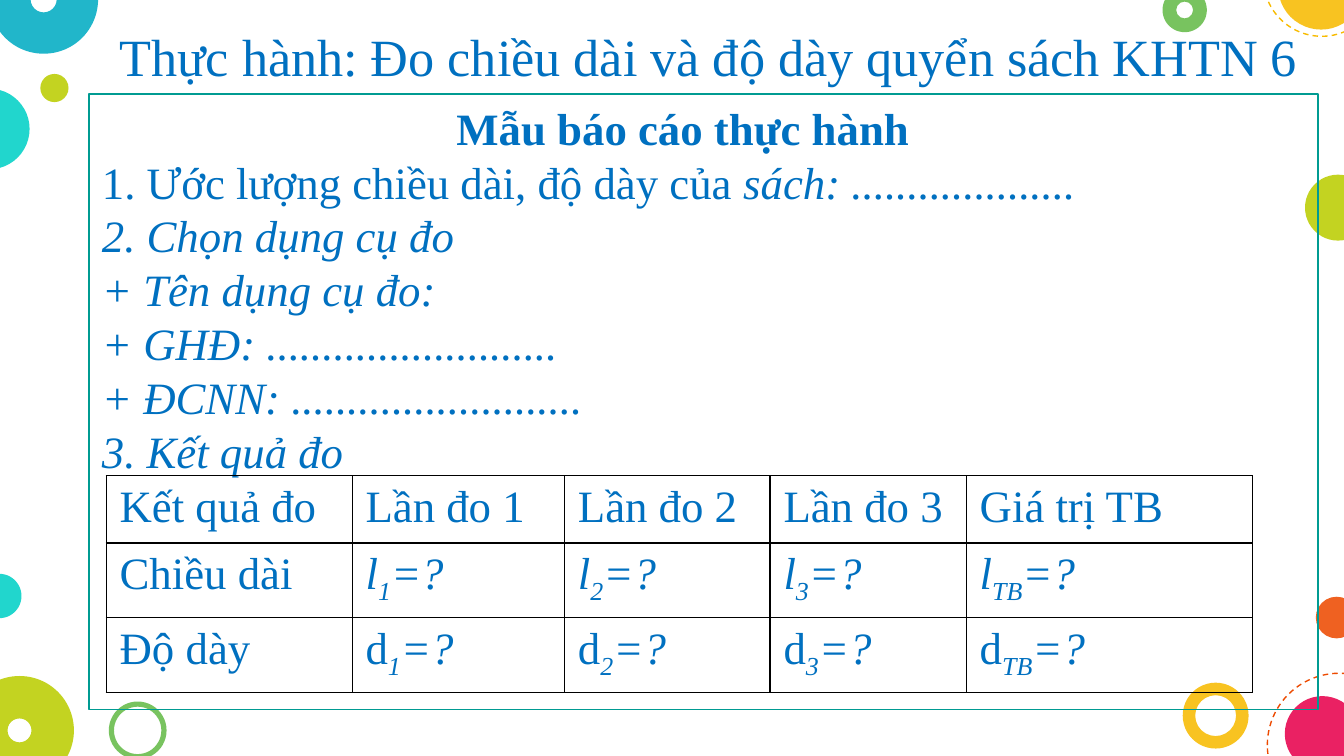
from dataclasses import dataclass
from typing import NamedTuple

from lxml import etree
from pptx import Presentation
from pptx.dml.color import RGBColor
from pptx.enum import dml, shapes, text
from pptx.oxml import ns
from pptx.util import Inches, Pt


@dataclass(frozen=True)
class Theme:
    font: str = "Times New Roman"
    ink: str = "0070C0"
    frame: str = "009B92"
    grid: str = "000000"
    aqua: str = "00D1C6"
    teal: str = "00ACC3"
    gold: str = "F8BB00"
    lime: str = "BBCD00"
    green: str = "65BB48"
    red: str = "ED4A00"
    pink: str = "E8004C"
    title: int = 28
    body: int = 24
    alpha: int = 87


T = Theme()


class Dot(NamedTuple):
    left: float
    top: float
    size: float
    color: str
    ring: float = 0  # band width as a share of the size; 0 is a full disc
    dash: bool = False


class Bit(NamedTuple):
    words: str
    bold: bool = False
    slant: bool = False
    sub: bool = False


DOTS = [
    Dot(-0.38, 0.66, 0.6, T.aqua),
    Dot(8.8, 5.08, 0.49, T.gold, 0.19),
    Dot(-0.08, -0.41, 0.81, T.teal, 0.38),
    Dot(0.3, 0.55, 0.21, T.lime),
    Dot(9.43, 5.01, 1.07, T.red, dash=True),
    Dot(0.81, 5.22, 0.43, T.green, 0.09),
    Dot(9.79, 4.44, 0.31, T.red),
    Dot(-0.26, 5.03, 0.81, T.lime, 0.39),
    Dot(9.56, 5.18, 0.56, T.pink),
    Dot(8.65, -0.09, 0.33, T.green, 0.31),
    Dot(9.51, -0.42, 0.64, T.gold),
    Dot(9.71, 1.3, 0.49, T.lime),
    Dot(9.4, -0.6, 0.87, T.gold, dash=True),
    Dot(-0.17, 4.27, 0.33, T.aqua),
]

LINES = [
    [Bit("Mẫu báo cáo thực hành", bold=True)],
    [Bit("1. Ước lượng chiều dài, độ dày của "),
     Bit("sách: ....................", slant=True)],
    [Bit("2. Chọn dụng cụ đo", slant=True)],
    [Bit("+ Tên dụng cụ đo:", slant=True)],
    [Bit("+ GHĐ: ..........................", slant=True)],
    [Bit("+ ĐCNN: ..........................", slant=True)],
    [Bit("3. Kết quả đo", slant=True)],
]

HEADS = ["Kết quả đo", "Lần đo 1", "Lần đo 2", "Lần đo 3", "Giá trị TB"]
MARKS = ["1", "2", "3", "TB"]
COLS = [1.83, 1.58, 1.53, 1.46, 2.13]
ROWS = [0.5, 0.55, 0.55]


def rgb(code: str) -> RGBColor:
    return RGBColor.from_string(code)


def box(left: float, top: float, width: float, height: float) -> list[int]:
    return [Inches(n) for n in (left, top, width, height)]


def write(para, bits: list[Bit], size: int = T.body) -> None:
    for bit in bits:
        run = para.add_run()
        run.text = bit.words
        font = run.font
        font.name, font.size = T.font, Pt(size)
        font.bold, font.italic = bit.bold, bit.slant
        font.color.rgb = rgb(T.ink)
        if bit.sub:
            run._r.get_or_add_rPr().set("baseline", "-25000")


def draw_dot(slide, dot: Dot) -> None:
    kind = shapes.MSO_SHAPE.DONUT if dot.ring else shapes.MSO_SHAPE.OVAL
    shape = slide.shapes.add_shape(
        kind, *box(dot.left, dot.top, dot.size, dot.size))
    shape.shadow.inherit = False
    if dot.ring:
        shape.adjustments[0] = dot.ring
    if dot.dash:
        shape.fill.background()
        shape.line.color.rgb = rgb(dot.color)
        shape.line.width = Pt(0.75)
        shape.line.dash_style = dml.MSO_LINE.DASH
        return
    shape.line.fill.background()
    shape.fill.solid()
    shape.fill.fore_color.rgb = rgb(dot.color)
    tint = shape._element.spPr.find(".//" + ns.qn("a:srgbClr"))
    etree.SubElement(tint, ns.qn("a:alpha"), val=str(T.alpha * 1000))


def draw_frame(slide) -> None:
    frame = slide.shapes.add_shape(
        shapes.MSO_SHAPE.RECTANGLE, *box(0.66, 0.7, 9.15, 4.58))
    frame.shadow.inherit = False
    frame.fill.background()
    frame.line.color.rgb = rgb(T.frame)
    frame.line.width = Pt(1)


def set_title(slide) -> None:
    title = slide.shapes.title
    title.left, title.top, title.width, title.height = box(
        0.79, 0.13, 11.93, 0.57)
    frame = title.text_frame
    frame.auto_size = text.MSO_AUTO_SIZE.NONE
    frame.vertical_anchor = text.MSO_ANCHOR.TOP
    para = frame.paragraphs[0]
    para.alignment = text.PP_ALIGN.LEFT
    words = "Thực hành: Đo chiều dài và độ dày quyển sách KHTN 6"
    write(para, [Bit(words)], T.title)


def draw_form(slide) -> None:
    frame = slide.shapes.add_textbox(*box(0.66, 0.7, 8.84, 3.4)).text_frame
    frame.word_wrap = True
    for row, bits in enumerate(LINES):
        para = frame.add_paragraph() if row else frame.paragraphs[0]
        para.alignment = (
            text.PP_ALIGN.JUSTIFY if row else text.PP_ALIGN.CENTER)
        write(para, bits)


def rule_cell(cell) -> None:
    """Clear the cell's fill and line all four sides."""
    cell.fill.background()
    props = cell._tc.get_or_add_tcPr()
    for spot, side in enumerate("LRTB"):
        line = etree.Element(ns.qn("a:ln" + side), w=str(Pt(0.75)))
        fill = etree.SubElement(line, ns.qn("a:solidFill"))
        etree.SubElement(fill, ns.qn("a:srgbClr"), val=T.grid)
        props.insert(spot, line)


def sign(name: str, mark: str, slant: bool) -> list[Bit]:
    return [Bit(name, slant=slant), Bit(mark, slant=True, sub=True),
            Bit("=?", slant=True)]


def draw_table(slide) -> None:
    data = [
        [[Bit(head)] for head in HEADS],
        [[Bit("Chiều dài")]] + [sign("l", mark, True) for mark in MARKS],
        [[Bit("Độ dày")]] + [sign("d", mark, False) for mark in MARKS],
    ]
    table = slide.shapes.add_table(
        len(ROWS), len(COLS), *box(0.79, 3.54, sum(COLS), sum(ROWS))).table
    for col, width in zip(table.columns, COLS):
        col.width = Inches(width)
    for row, height, cells in zip(table.rows, ROWS, data):
        row.height = Inches(height)
        for cell, bits in zip(row.cells, cells):
            rule_cell(cell)
            write(cell.text_frame.paragraphs[0], bits)


def main() -> None:
    deck = Presentation()
    deck.slide_width = Inches(10)
    deck.slide_height = deck.slide_width * 9 // 16
    slide = deck.slides.add_slide(deck.slide_layouts[5])
    for dot in DOTS:
        draw_dot(slide, dot)
    draw_frame(slide)
    set_title(slide)
    draw_form(slide)
    draw_table(slide)
    deck.save("out.pptx")


if __name__ == "__main__":
    main()
